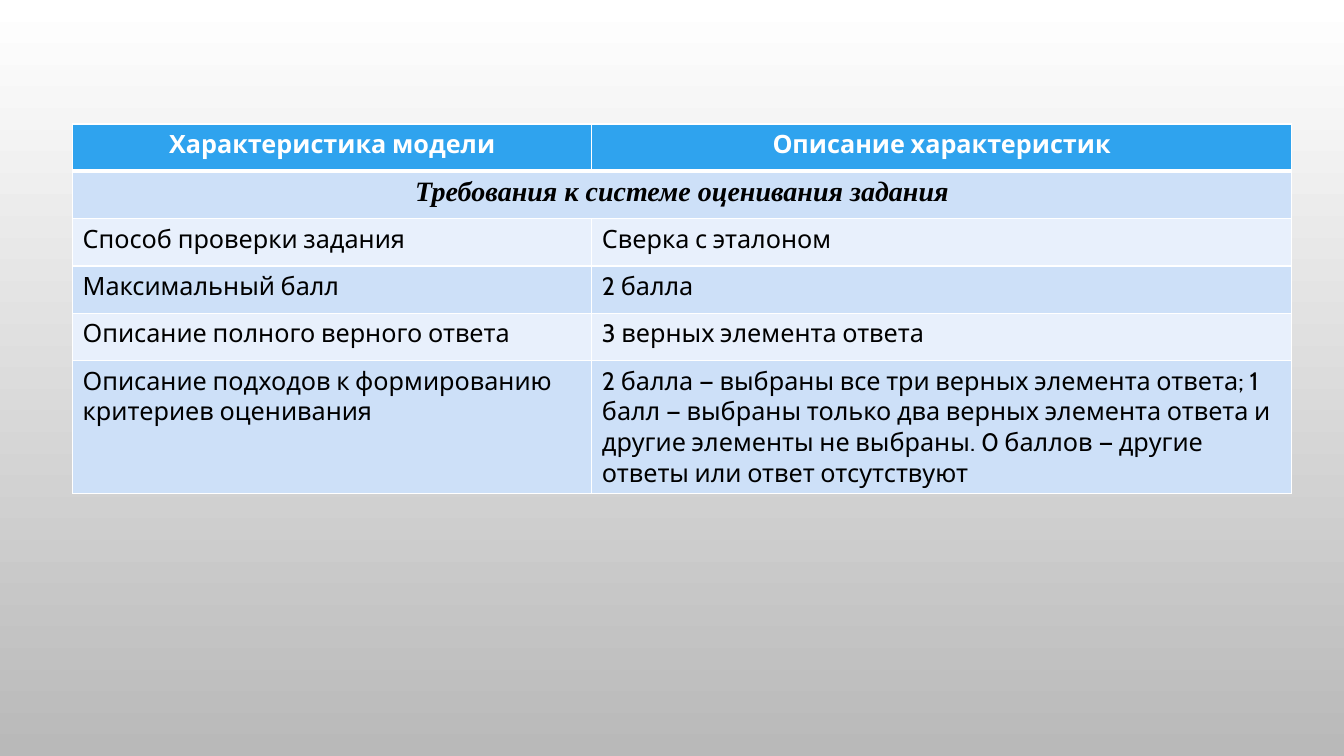
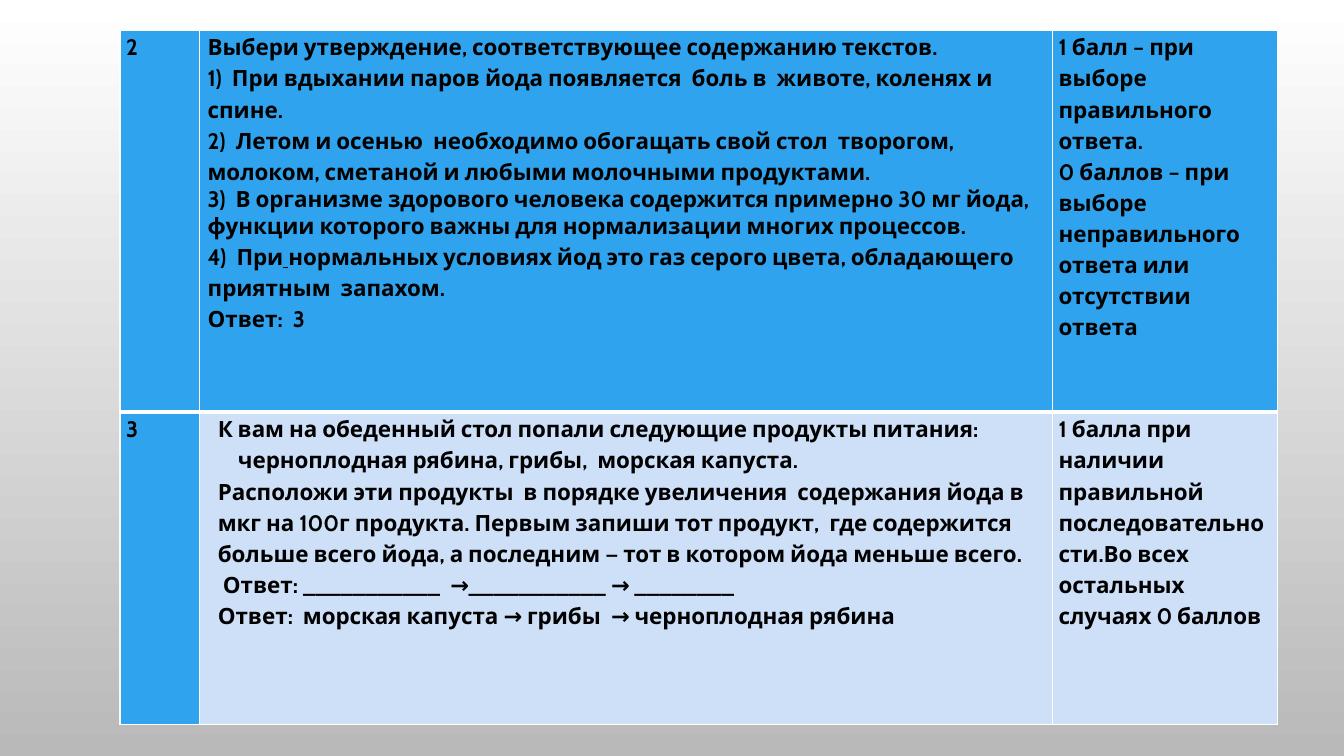
from dataclasses import dataclass

from lxml import etree
from pptx import Presentation
from pptx.dml.color import RGBColor
from pptx.enum.text import PP_ALIGN
from pptx.oxml.ns import qn
from pptx.util import Inches, Pt

CENTER, LEFT = PP_ALIGN.CENTER, PP_ALIGN.LEFT
WHITE, BLACK, GREY = "FFFFFF", "000000", "B9B9B9"
BLUE, LIGHT, PALE = "2FA3EE", "CDE0F8", "E8F0FC"
BODY_FONT, SERIF_FONT = "Cabin", "Times New Roman"
SIDES = ("L", "R", "T", "B")
THIN, THICK = 1, 3

MODEL_HEADER = ("Характеристика модели", "Описание характеристик")
MODEL_SECTION = "Требования к системе оценивания задания"
MODEL_ROWS = [
    ("Способ проверки задания", "Сверка с эталоном"),
    ("Максимальный балл", "2 балла"),
    ("Описание полного верного ответа", "3 верных элемента ответа"),
    ("Описание подходов к формированию критериев оценивания",
     "2 балла — выбраны все три верных элемента ответа; 1 балл — выбраны только два "
     "верных элемента ответа и другие элементы не выбраны. 0 баллов — другие ответы "
     "или ответ отсутствуют"),
]


@dataclass
class Para:
    """Paragraph content; every second run is underlined."""
    runs: tuple
    indent: float = 0
    spacing: float = 1.15


TASKS = [
    (
        [Para(("2",))],
        [
            Para(("Выбери утверждение, соответствующее содержанию текстов.",), 0.02),
            Para(("1)  При вдыхании паров йода появляется  боль в  животе, "
                  "коленях и спине.",), 0.02),
            Para(("2)  Летом и осенью  необходимо обогащать свой стол  творогом, "
                  "молоком, сметаной и любыми молочными продуктами.",), 0.02),
            Para(("3)  В организме здорового человека содержится примерно 30 мг йода, "
                  "функции которого важны для нормализации многих процессов.",), 0.02, 1),
            Para(("4)  При", " ", "нормальных условиях йод это газ серого цвета, "
                  "обладающего приятным  запахом."), 0.02),
            Para(("Ответ:  3",), 0.02),
        ],
        [
            Para(("1 балл – при выборе правильного ответа.",)),
            Para(("0 баллов – при выборе неправильного ответа или отсутствии ответа",)),
        ],
    ),
    (
        [Para(("3",))],
        [
            Para(("К вам на обеденный стол попали следующие продукты питания:",), 0.12),
            Para(("черноплодная рябина, грибы,  морская капуста.",), 0.32),
            Para(("Расположи эти продукты  в порядке увеличения  содержания йода в мкг "
                  "на 100г продукта. Первым запиши тот продукт,  где содержится больше "
                  "всего йода, а последним — тот в котором йода меньше всего.",), 0.12),
            Para(("Ответ: ___________  →___________ → ________",), 0.17),
            Para(("Ответ:  морская капуста → грибы  → черноплодная рябина",), 0.12),
        ],
        [Para(("1 балла при наличии правильной последовательности."
               "Во всех остальных случаях 0 баллов",))],
    ),
]


def rgb(value):
    """Turn a hex string into a colour."""
    return RGBColor.from_string(value)


def add_slide(prs):
    """Add a blank slide with the shared grey gradient."""
    s = prs.slides.add_slide(prs.slide_layouts[6])
    fill = s.background.fill
    fill.gradient()
    fill.gradient_angle = 270
    for stop, color, position in zip(fill.gradient_stops, (WHITE, GREY), (0, 1)):
        stop.color.rgb = rgb(color)
        stop.position = position
    return s


def add_grid(s, left, top, widths, heights):
    """Add a table without style banding and return it."""
    frame = s.shapes.add_table(len(heights), len(widths), Inches(left), Inches(top),
                               Inches(sum(widths)), Inches(sum(heights)))
    table = frame.table
    table.first_row = table.horz_banding = False
    for column, width in zip(table.columns, widths):
        column.width = Inches(width)
    for row, height in zip(table.rows, heights):
        row.height = Inches(height)
    return table


def style_cell(cell, fill, bottom=THIN, top=THIN):
    """Fill a cell and draw its white borders."""
    cell.fill.solid()
    cell.fill.fore_color.rgb = rgb(fill)
    tc_pr = cell._tc.get_or_add_tcPr()
    widths = {"T": top, "B": bottom}
    for i, side in enumerate(SIDES):
        line = etree.Element(qn(f"a:ln{side}"), w=str(Pt(widths.get(side, THIN))))
        solid = etree.SubElement(line, qn("a:solidFill"))
        etree.SubElement(solid, qn("a:srgbClr"), val=WHITE)
        tc_pr.insert(i, line)


def style_font(p, size, color=BLACK, bold=False, italic=False, name=BODY_FONT):
    """Set the font of a whole paragraph."""
    font = p.font
    font.name, font.size = name, Pt(size)
    font.bold, font.italic = bold, italic
    font.color.rgb = rgb(color)


def fill_line(cell, text, size=18, align=LEFT, **font):
    """Put one paragraph into a cell."""
    p = cell.text_frame.paragraphs[0]
    p.add_run().text = text
    p.alignment = align
    style_font(p, size, **font)


def fill_paras(cell, paras):
    """Put bold task paragraphs into a cell with narrow margins."""
    cell.margin_left = cell.margin_right = Inches(0.06)
    cell.margin_top = cell.margin_bottom = 0
    tf = cell.text_frame
    for i, para in enumerate(paras):
        p = tf.add_paragraph() if i else tf.paragraphs[0]
        p.line_spacing = para.spacing
        p._p.get_or_add_pPr().set("marL", str(Inches(para.indent)))
        for j, text in enumerate(para.runs):
            r = p.add_run()
            r.text = text
            if j % 2:
                r.font.underline = True
        style_font(p, 16, bold=True)


def model_slide(prs, left=0.72, top=1.23):
    """Build the table of model characteristics."""
    heights = [0.47] * (len(MODEL_ROWS) + 1) + [1.31]
    table = add_grid(add_slide(prs), left, top, (5.15, 6.94), heights)
    for col, text in enumerate(MODEL_HEADER):
        cell = table.cell(0, col)
        style_cell(cell, BLUE, bottom=THICK)
        fill_line(cell, text, align=CENTER, color=WHITE, bold=True)
        style_cell(table.cell(1, col), LIGHT, top=THICK)
    section = table.cell(1, 0)
    section.merge(table.cell(1, 1))
    fill_line(section, MODEL_SECTION, 20, CENTER, bold=True, italic=True, name=SERIF_FONT)
    for row, texts in enumerate(MODEL_ROWS, 2):
        for col, text in enumerate(texts):
            cell = table.cell(row, col)
            style_cell(cell, LIGHT if row % 2 else PALE)
            fill_line(cell, text)


def tasks_slide(prs, left=1.19, top=0.3):
    """Build the table of tasks with their scoring."""
    table = add_grid(add_slide(prs), left, top, (0.79, 8.46, 2.23), (3.79, 3.1))
    for row, task in enumerate(TASKS):
        for col, paras in enumerate(task):
            cell = table.cell(row, col)
            fill = LIGHT if row and col else BLUE
            style_cell(cell, fill, bottom=THIN if row else THICK, top=THICK if row else THIN)
            fill_paras(cell, paras)


def main():
    """Build and save the presentation."""
    prs = Presentation()
    prs.slide_width, prs.slide_height = Inches(13.33), Inches(7.5)
    model_slide(prs)
    tasks_slide(prs)
    prs.save("out.pptx")


if __name__ == "__main__":
    main()
